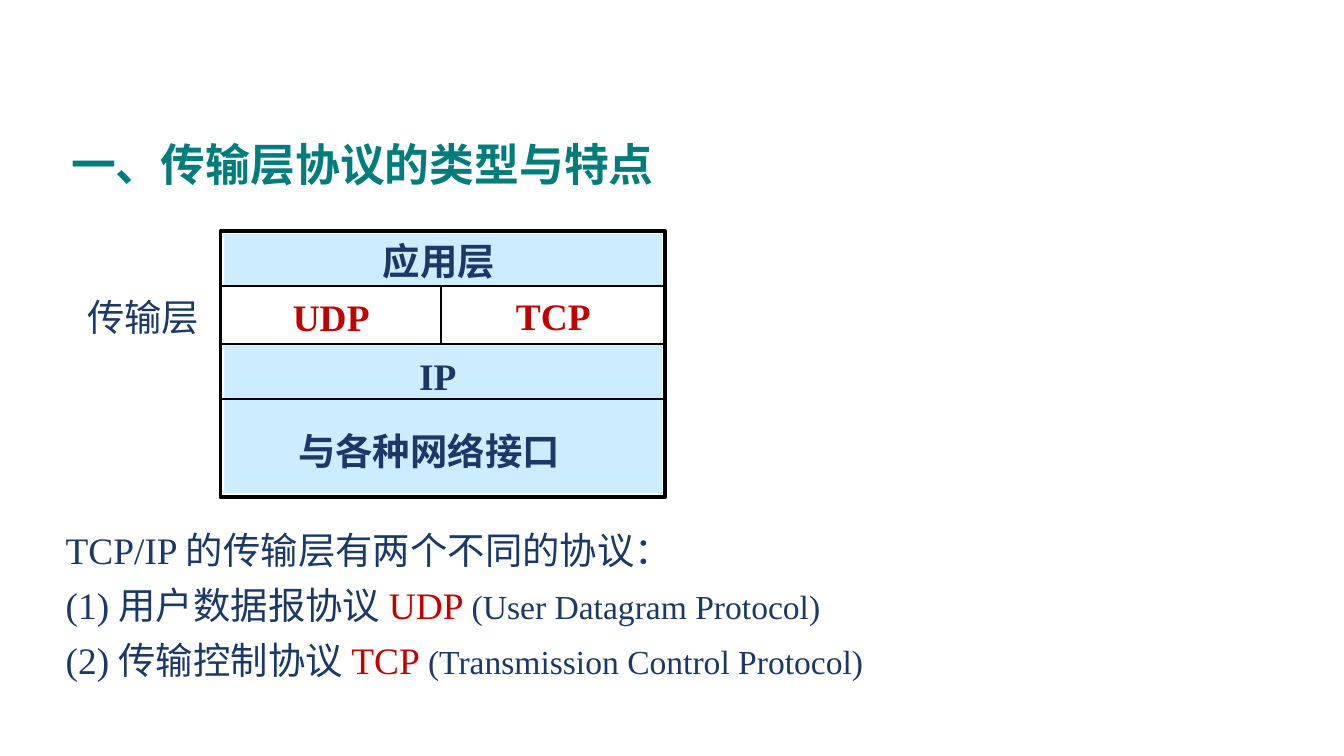
from dataclasses import dataclass

import pptx
import pptx.dml.color
import pptx.enum.shapes
import pptx.enum.text
import pptx.oxml
import pptx.oxml.ns
import pptx.util

Inches, Pt = pptx.util.Inches, pptx.util.Pt
MSO_ANCHOR = pptx.enum.text.MSO_ANCHOR
PP_ALIGN = pptx.enum.text.PP_ALIGN

FONT = "Times New Roman"
TEAL, NAVY, RED = "007D7A", "1A3868", "C00000"
SKY, WHITE, BLACK = "CCECFF", "FFFFFF", "000000"


@dataclass
class Box:
    x: float
    y: float
    w: float
    h: float

    def emu(self):
        return [Inches(v) for v in (self.x, self.y, self.w, self.h)]


@dataclass
class Label:
    text: str
    box: Box
    color: str = NAVY
    bold: bool = True
    wrap: bool = False
    fill: str = ""


def rgb(value: str):
    return pptx.dml.color.RGBColor.from_string(value)


def add_run(p, text: str, *, size: float = 20, color: str = NAVY, bold: bool = False):
    r = p.add_run()
    r.text = text
    r.font.name, r.font.size, r.font.bold = FONT, Pt(size), bold
    r.font.color.rgb = rgb(color)


def add_rect(shapes, box: Box, fill: str, line: str = "", width: float = 2):
    sp = shapes.add_shape(pptx.enum.shapes.MSO_SHAPE.RECTANGLE, *box.emu())
    sp.shadow.inherit = False
    sp.fill.solid()
    sp.fill.fore_color.rgb = rgb(fill)
    if line:
        sp.line.color.rgb = rgb(line)
        sp.line.width = Pt(width)
    else:
        sp.line.fill.background()


def add_line(shapes, x1: float, y1: float, x2: float, y2: float):
    ln = shapes.add_connector(pptx.enum.shapes.MSO_CONNECTOR.STRAIGHT,
                              *[Inches(v) for v in (x1, y1, x2, y2)])
    ln.line.color.rgb = rgb(BLACK)
    ln.line.width = Pt(1)
    effects = pptx.oxml.parse_xml(f"<a:effectLst {pptx.oxml.ns.nsdecls('a')}/>")
    ln._element.spPr.append(effects)


def add_label(shapes, label: Label):
    sp = shapes.add_textbox(*label.box.emu())
    if label.fill:
        sp.fill.solid()
        sp.fill.fore_color.rgb = rgb(label.fill)
    tf = sp.text_frame
    tf.word_wrap = label.wrap
    add_run(tf.paragraphs[0], label.text, color=label.color, bold=label.bold)


# 16:9 slide
prs = pptx.Presentation()
prs.slide_width = Inches(10)
prs.slide_height = prs.slide_width * 9 // 16
s = prs.slides.add_slide(prs.slide_layouts[5])

# Title
title = s.shapes.title
title.left, title.top, title.width, title.height = Box(0.43, 0.86, 5.35, 0.61).emu()
tf = title.text_frame
tf.auto_size = pptx.enum.text.MSO_AUTO_SIZE.NONE
tf.vertical_anchor = MSO_ANCHOR.BOTTOM
tf.paragraphs[0].alignment = PP_ALIGN.LEFT
add_run(tf.paragraphs[0], "一、传输层协议的类型与特点", size=24, color=TEAL, bold=True)

# Protocol stack: frame, tinted bands, labels, dividers
stack = s.shapes.add_group_shape().shapes
LEFT, RIGHT, MIDDLE = 1.64, 4.95, 3.28
APP_END, TRANSPORT_END, IP_END = 2.13, 2.56, 2.97
add_rect(stack, Box(LEFT, 1.72, RIGHT - LEFT, 1.98), WHITE, BLACK)
for band in (Box(1.67, 1.74, 3.26, 0.38), Box(1.67, 2.57, 3.26, 1.1)):
    add_rect(stack, band, SKY)
for label in (
    Label("TCP", Box(3.74, 2.13, 0.76, 0.43), RED),
    Label("UDP", Box(2.08, 2.14, 0.78, 0.43), RED),
    Label("IP", Box(3.02, 2.58, 0.48, 0.43), fill=SKY),
    Label("应用层", Box(2.75, 1.72, 1.04, 0.43)),
    Label("与各种网络接口", Box(2.12, 3.14, 2.52, 0.43), wrap=True),
):
    add_label(stack, label)
for y in (APP_END, TRANSPORT_END, IP_END):
    add_line(stack, LEFT, y, RIGHT, y)
add_line(stack, MIDDLE, APP_END, MIDDLE, TRANSPORT_END)

# Layer name beside the stack
add_label(s.shapes, Label("传输层", Box(0.55, 2.14, 1.6, 0.44), bold=False, wrap=True))

# Description of the two protocols
tf = s.shapes.add_textbox(*Box(0.39, 3.91, 6.95, 1.24).emu()).text_frame
tf.word_wrap = True
lines = (
    ("TCP/IP 的传输层有两个不同的协议：", "", ""),
    ("(1) 用户数据报协议 ", "UDP ", "(User Datagram Protocol)"),
    ("(2) 传输控制协议 ", "TCP ", "(Transmission Control Protocol)"),
)
for i, (lead, short_name, full_name) in enumerate(lines):
    p = tf.add_paragraph() if i else tf.paragraphs[0]
    p.line_spacing = 0.9
    p.space_before, p.space_after = Pt(4 if i else 0), Pt(4)
    pPr = p._p.get_or_add_pPr()
    pPr.set("marL", str(Inches(0.38)))
    pPr.set("indent", str(-Inches(0.38)))
    add_run(p, lead)
    if short_name:
        add_run(p, short_name, color=RED)
        add_run(p, full_name, size=18)

prs.save("out.pptx")
